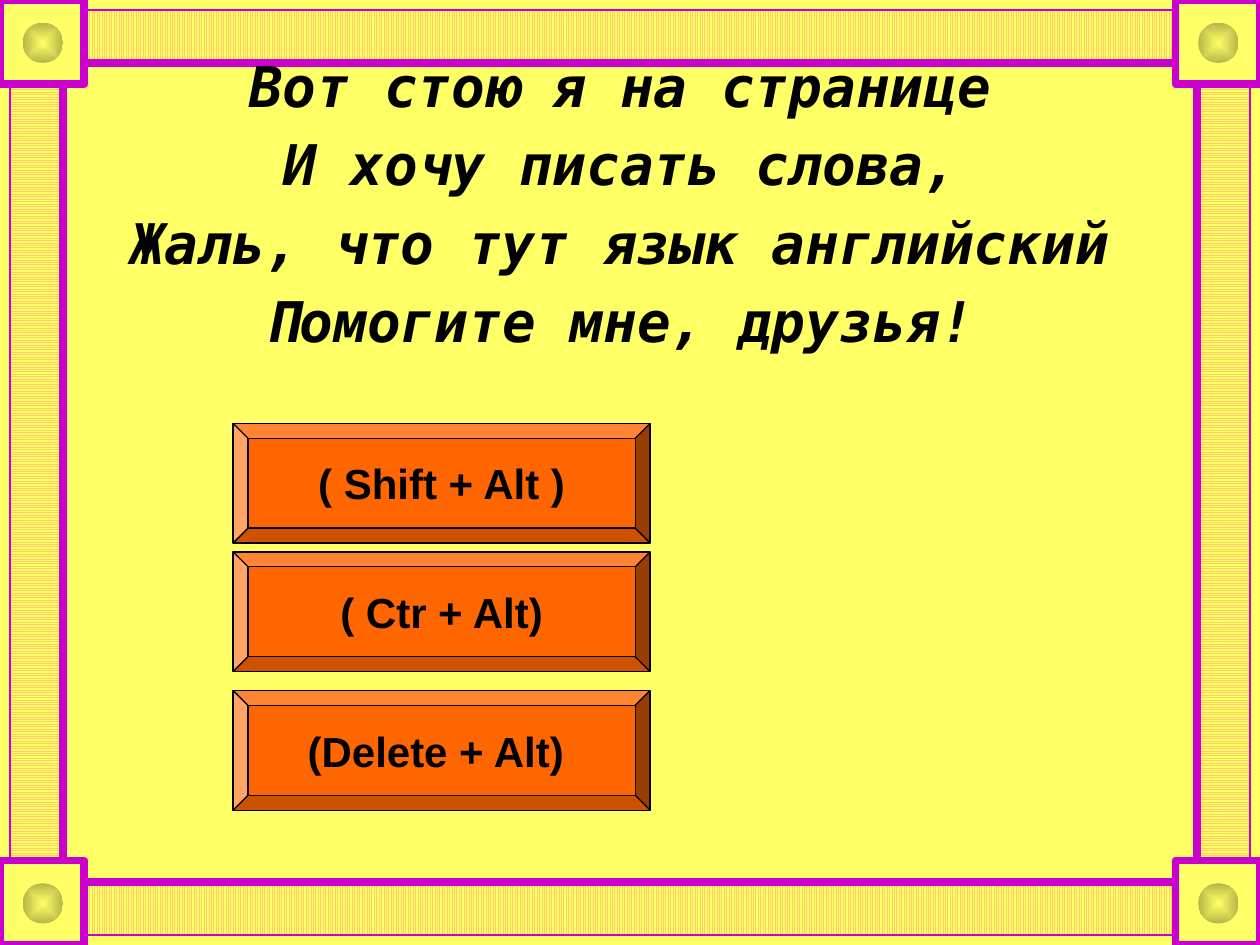
import itertools

import lxml.etree
import pptx
import pptx.dml.color
import pptx.enum.dml
import pptx.enum.shapes
import pptx.enum.text
import pptx.oxml.ns
import pptx.util

Inches = pptx.util.Inches
SHAPE = pptx.enum.shapes.MSO_SHAPE
PATTERN = pptx.enum.dml.MSO_PATTERN
ALIGN = pptx.enum.text.PP_ALIGN
ANCHOR = pptx.enum.text.MSO_ANCHOR
qn = pptx.oxml.ns.qn

YELLOW = "FFFF66"
SAND = "FFCC66"
OLIVE = "B6B649"
MAGENTA = "CC00CC"
ORANGE = "FF6600"
BLACK = "000000"

POEM = [
    "Вот стою я на странице",
    "И хочу писать слова,",
    "Жаль, что тут язык английский",
    "Помогите мне, друзья!",
]
ANSWERS = [
    ("( Shift + Alt )", 3.36),
    ("( Ctr + Alt)", 4.38),
    ("(Delete + Alt) ", 5.48),
]


def rgb(color):
    """Turn a hex string into a colour."""
    return pptx.dml.color.RGBColor.from_string(color)


def add_shape(slide, preset, left, top, width, height, fill=None, line=None, weight=1):
    """Add a preset shape without shadow, with optional solid fill and line."""
    shape = slide.shapes.add_shape(
        preset, Inches(left), Inches(top), Inches(width), Inches(height)
    )
    shape.shadow.inherit = False
    if fill:
        shape.fill.solid()
        shape.fill.fore_color.rgb = rgb(fill)
    else:
        shape.fill.background()
    if line:
        shape.line.color.rgb = rgb(line)
        shape.line.width = pptx.util.Pt(weight)
    else:
        shape.line.fill.background()
    return shape


def set_font(paragraph, name, size, italic=False):
    """Give a paragraph its bold black font."""
    font = paragraph.font
    font.name = name
    font.size = pptx.util.Pt(size)
    font.bold = True
    font.italic = italic
    font.color.rgb = rgb(BLACK)


def add_strip(slide, left, top, width, height, pattern):
    """Add a striped band of the border."""
    strip = add_shape(slide, SHAPE.RECTANGLE, left, top, width, height)
    strip.fill.patterned()
    strip.fill.pattern = pattern
    strip.fill.fore_color.rgb = rgb(SAND)
    strip.fill.back_color.rgb = rgb(YELLOW)


def add_corner(slide, left, top, size):
    """Add a framed corner square with a shaded stud."""
    add_shape(slide, SHAPE.RECTANGLE, left, top, size, size, YELLOW, MAGENTA, 4.5)
    stud = add_shape(slide, SHAPE.OVAL, left + 0.18, top + 0.18, 0.32, 0.32)
    stud.fill.gradient()
    for stop, color in zip(stud.fill.gradient_stops, (YELLOW, OLIVE)):
        stop.color.rgb = rgb(color)
    gradient = stud.element.spPr.find(qn("a:gradFill"))
    gradient.remove(gradient.find(qn("a:lin")))
    shading = lxml.etree.SubElement(gradient, qn("a:path"), {"path": "shape"})
    center = dict.fromkeys("ltrb", "50000")
    lxml.etree.SubElement(shading, qn("a:fillToRect"), center)


def add_border(slide, width, height):
    """Add the striped border with its two frames and four corners."""
    inset, edge, band, corner = 0.5, 0.08, 0.42, 0.67
    inner_width, inner_height = width - 2 * inset, height - 2 * inset
    for top in (edge, height - inset):
        add_strip(slide, inset, top, inner_width, band, PATTERN.NARROW_VERTICAL)
    for left in (edge, width - inset):
        add_strip(slide, left, inset, band, inner_height, PATTERN.NARROW_HORIZONTAL)
    for margin, weight in ((inset, 4.5), (edge, 1)):
        add_shape(
            slide, SHAPE.RECTANGLE, margin, margin,
            width - 2 * margin, height - 2 * margin, line=MAGENTA, weight=weight,
        )
    for left, top in itertools.product((0, width - corner), (0, height - corner)):
        add_corner(slide, left, top, corner)


def add_poem(slide, left, top, width, height):
    """Add the centred verse with a hanging indent."""
    verse = slide.shapes.add_textbox(
        Inches(left), Inches(top), Inches(width), Inches(height)
    ).text_frame
    verse.word_wrap = True
    verse.text = "\n".join(POEM)
    for paragraph in verse.paragraphs:
        paragraph.alignment = ALIGN.CENTER
        set_font(paragraph, "DejaVu Sans Mono", 32, italic=True)
        properties = paragraph.font._element.getparent()
        properties.set("marL", str(Inches(0.38)))
        properties.set("indent", str(-Inches(0.38)))
        before = lxml.etree.Element(qn("a:spcBef"))
        lxml.etree.SubElement(before, qn("a:spcPct"), {"val": "20000"})
        properties.insert(0, before)


def add_answer(slide, label, left, top, width, height):
    """Add a bevelled answer button."""
    button = add_shape(
        slide, SHAPE.BEVEL, left, top, width, height, ORANGE, BLACK, 0.75
    )
    button.adjustments[0] = 0.125
    caption = button.text_frame
    caption.word_wrap = False
    caption.vertical_anchor = ANCHOR.MIDDLE
    caption.text = label
    caption.paragraphs[0].alignment = ALIGN.CENTER
    set_font(caption.paragraphs[0], "Arial", 24)


def main():
    """Build and save the slide."""
    width, height = 10, 7.5
    presentation = pptx.Presentation()
    presentation.slide_width = Inches(width)
    presentation.slide_height = Inches(height)
    slide = presentation.slides.add_slide(presentation.slide_layouts[6])
    slide.background.fill.solid()
    slide.background.fill.fore_color.rgb = rgb(YELLOW)
    add_border(slide, width, height)
    add_poem(slide, 0.2, 0.36, 9.45, 6.3)
    for label, top in ANSWERS:
        add_answer(slide, label, 1.85, top, 3.31, 0.95)
    presentation.save("out.pptx")


if __name__ == "__main__":
    main()
